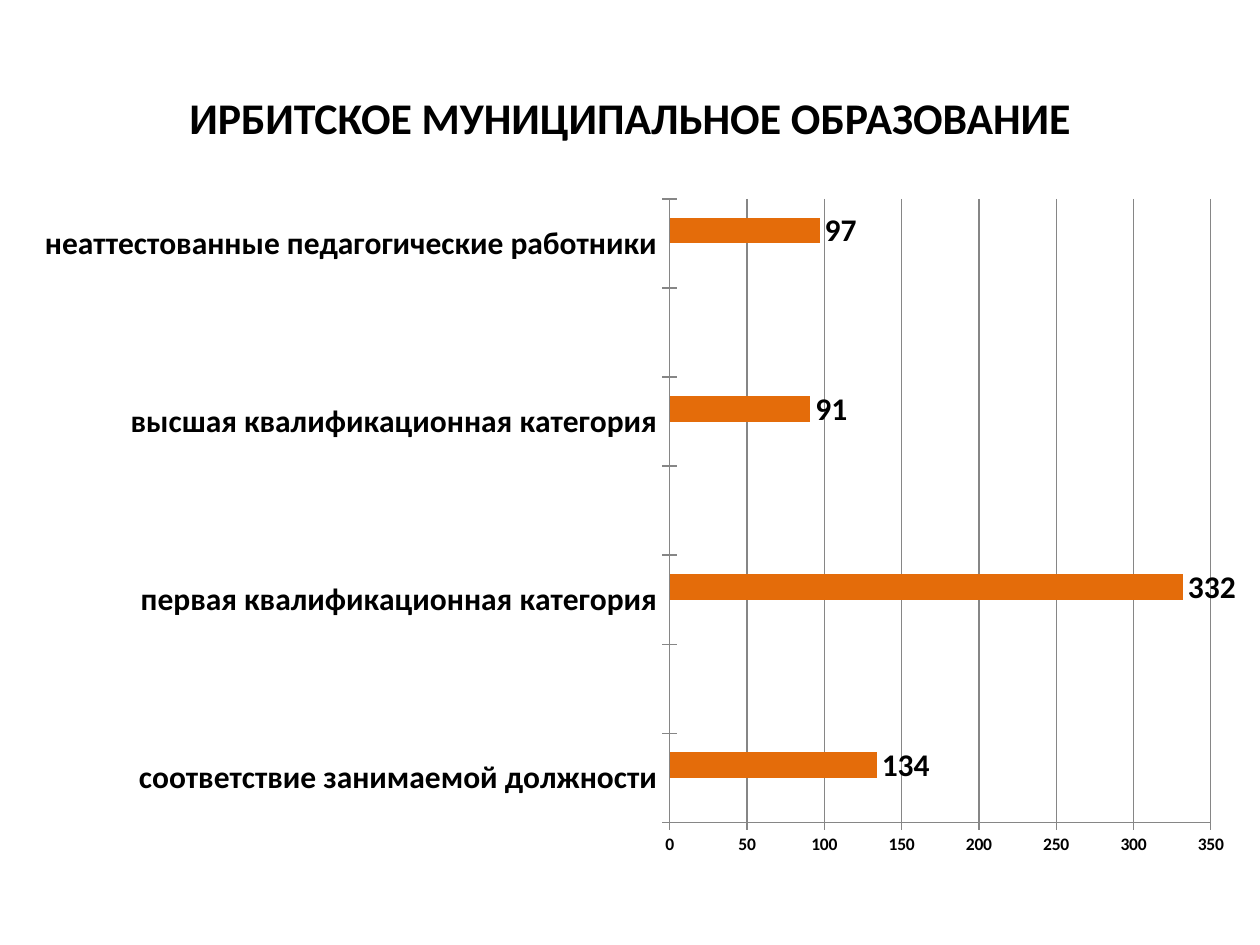
import lxml.etree
import pptx
import pptx.chart.data
import pptx.dml.color
import pptx.enum.chart
import pptx.enum.text
import pptx.oxml.ns
import pptx.util
from pptx.util import Inches

BLACK = pptx.dml.color.RGBColor(0x00, 0x00, 0x00)
GRAY = pptx.dml.color.RGBColor(0x86, 0x86, 0x86)
BLUE = pptx.dml.color.RGBColor(0x4F, 0x81, 0xBD)
ORANGE = pptx.dml.color.RGBColor(0xE4, 0x6C, 0x0A)
FONT = "Calibri"

STAFF = [
    ("соответствие занимаемой должности", 134),
    ("", None),
    ("первая квалификационная категория", 332),
    ("", None),
    ("высшая квалификационная категория", 91),
    ("", None),
    (" неаттестованные педагогические работники", 97),
]


def format_font(font, size, bold=True, color=BLACK):
    """Set the typeface, size, weight and colour of a font."""
    font.name = FONT
    font.size = pptx.util.Pt(size)
    font.bold = bold
    font.color.rgb = color


def write_text(frame, text, align=pptx.enum.text.PP_ALIGN.CENTER,
               anchor=pptx.enum.text.MSO_ANCHOR.MIDDLE, **style):
    """Write one formatted paragraph into a text frame."""
    frame.word_wrap = True
    frame.vertical_anchor = anchor
    para = frame.paragraphs[0]
    para.alignment = align
    span = para.add_run()
    span.text = text
    format_font(span.font, **style)


def add_title(page, text):
    """Place and fill the title placeholder."""
    title = page.shapes.title
    title.left, title.top = Inches(0.5), Inches(0.3)
    title.width, title.height = Inches(9), Inches(1.25)
    write_text(title.text_frame, text, size=25)


def format_axis(axis, size):
    """Give an axis its font, line and crossing tick marks."""
    axis.major_tick_mark = pptx.enum.chart.XL_TICK_MARK.CROSS
    axis.minor_tick_mark = pptx.enum.chart.XL_TICK_MARK.NONE
    axis.format.line.color.rgb = GRAY
    axis.format.line.width = pptx.util.Pt(0.75)
    format_font(axis.tick_labels.font, size)


def place_plot(chart, **fractions):
    """Fix the inner plot area as fractions of the chart."""
    qn = pptx.oxml.ns.qn
    area = chart.element.find(".//" + qn("c:plotArea"))
    for old in area.findall(qn("c:layout")):
        area.remove(old)
    layout = lxml.etree.Element(qn("c:layout"))
    area.insert(0, layout)
    manual = lxml.etree.SubElement(layout, qn("c:manualLayout"))
    settings = {"layoutTarget": "inner", "xMode": "edge", "yMode": "edge", **fractions}
    for name, value in settings.items():
        lxml.etree.SubElement(manual, qn("c:" + name)).set("val", str(value))


def add_staff_chart(page):
    """Add the bar chart of staff by qualification category."""
    names, counts = zip(*STAFF)
    data = pptx.chart.data.CategoryChartData()
    data.categories = names
    data.add_series("Series 1", [None] * len(names))
    data.add_series("Series 2", counts)
    chart = page.shapes.add_chart(
        pptx.enum.chart.XL_CHART_TYPE.BAR_CLUSTERED,
        Inches(-0.55), Inches(1.33), Inches(10.55), Inches(5.94), data).chart
    chart.has_legend = False
    chart.has_title = False
    format_font(chart.font, 10, bold=False)
    place_plot(chart, x=0.556, y=0.042, w=0.407, h=0.833)

    format_axis(chart.category_axis, 18)
    format_axis(chart.value_axis, 10)
    chart.value_axis.minimum_scale = 0
    chart.value_axis.maximum_scale = 350
    chart.value_axis.major_unit = 50
    chart.value_axis.has_major_gridlines = True
    grid = chart.value_axis.major_gridlines.format.line
    grid.color.rgb = GRAY
    grid.width = pptx.util.Pt(0.75)

    plot = chart.plots[0]
    plot.vary_by_categories = False
    plot.gap_width = 150
    plot.overlap = 0
    for series, color in zip(plot.series, (BLUE, ORANGE)):
        series.format.fill.solid()
        series.format.fill.fore_color.rgb = color
    labels = plot.series[1].data_labels
    labels.show_value = True
    labels.position = pptx.enum.chart.XL_LABEL_POSITION.OUTSIDE_END
    format_font(labels.font, 18)


def main():
    """Build the slide and save the deck."""
    deck = pptx.Presentation()
    deck.slide_width, deck.slide_height = Inches(10), Inches(7.5)
    page = deck.slides.add_slide(deck.slide_layouts[5])
    add_title(page, "ИРБИТСКОЕ МУНИЦИПАЛЬНОЕ ОБРАЗОВАНИЕ")
    add_staff_chart(page)
    deck.save("out.pptx")


if __name__ == "__main__":
    main()
